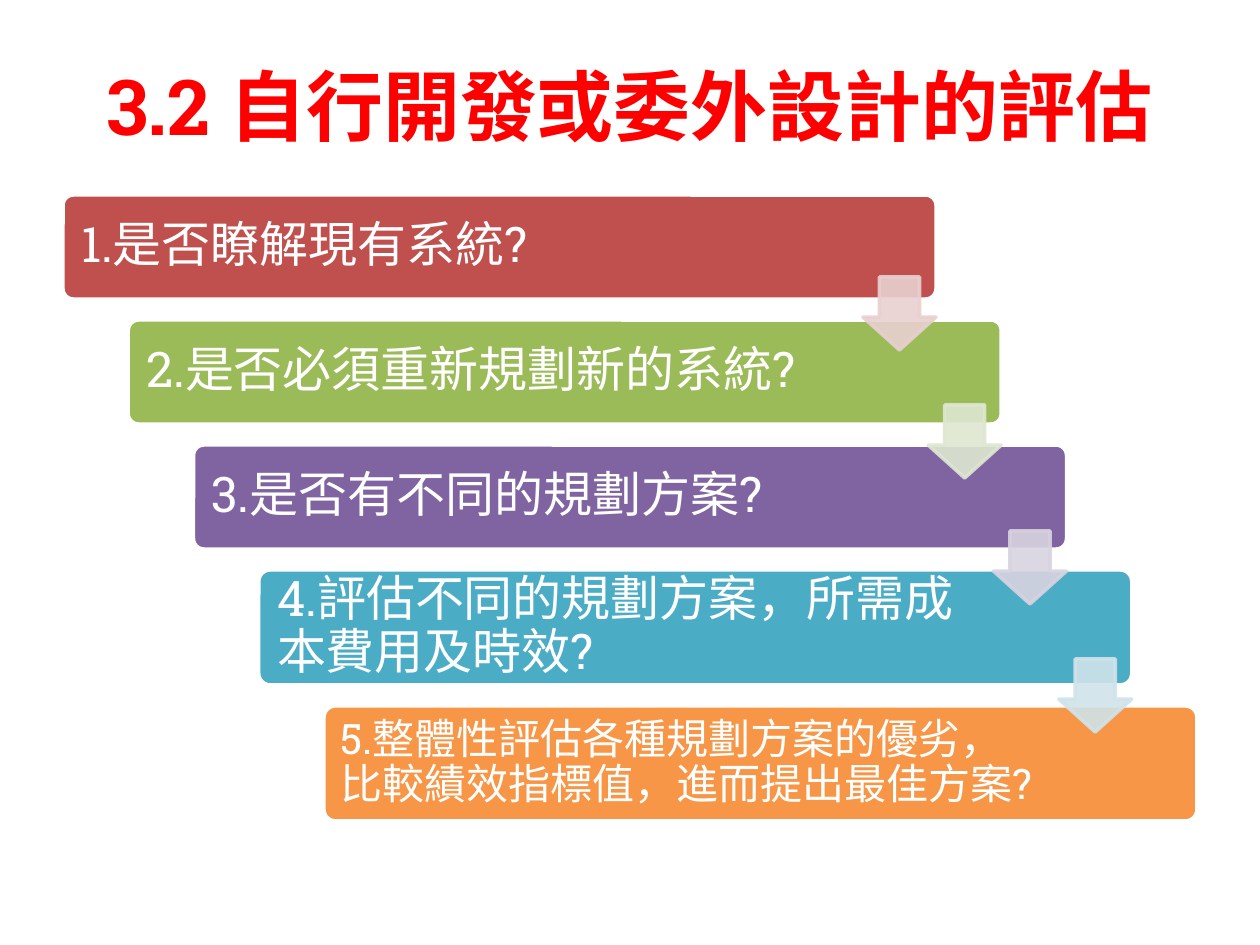
import pptx
import pptx.dml.color
import pptx.enum.shapes
import pptx.enum.text
import pptx.oxml.ns
import pptx.util
from lxml import etree

PX = 914400 / 126
FONT = "Roboto Slab"
SHAPES = pptx.enum.shapes.MSO_SHAPE
ALIGN = pptx.enum.text.PP_ALIGN

# question, bar colour, bar height, text size, side inset, right inset,
# then the next arrow's colour and its drop below the bar's top
STEPS = [
    ("1.是否瞭解現有系統?", "C0504D", 104, 28, 15, 143, "E8D0D0", 82),
    ("2.是否必須重新規劃新的系統?", "9BBB59", 104, 28, 15, 153, "DEE7D1", 85),
    ("3.是否有不同的規劃方案?", "8064A2", 104, 28, 15, 153, "D8D3E0", 86),
    ("4.評估不同的規劃方案，所需成本費用及時效?", "4BACC6", 115, 28, 15, 153, "D0E3EA", 89),
    ("5.整體性評估各種規劃方案的優劣，比較績效指標值，進而提出最佳方案?",
     "F79646", 115, 24, 13, 151, None, None),
]


def px(length):
    return pptx.util.Emu(round(length * PX))


def rgb(value):
    return pptx.dml.color.RGBColor.from_string(value)


def apply(target, formats):
    for name, value in formats.items():
        setattr(target, name, value)


def write(frame, words, align, size, colour, bold=False, spacing=None, insets=(13, 6, 13, 6)):
    """Fill a text frame; insets run left, top, right, bottom."""
    left, top, right, bottom = map(px, insets)
    apply(frame, {
        "word_wrap": True,
        "vertical_anchor": pptx.enum.text.MSO_ANCHOR.MIDDLE,
        "margin_left": left, "margin_top": top,
        "margin_right": right, "margin_bottom": bottom,
    })
    paragraph = frame.paragraphs[0]
    apply(paragraph, {"alignment": align, "line_spacing": spacing})
    run = paragraph.add_run()
    run.text = words
    apply(run.font, {"name": FONT, "size": pptx.util.Pt(size), "bold": bold})
    run.font.color.rgb = rgb(colour)


def add_block(slide, preset, box, fill, line, adjustments):
    block = slide.shapes.add_shape(preset, *map(px, box))
    block.shadow.inherit = False
    for index, value in enumerate(adjustments):
        block.adjustments[index] = value
    block.fill.solid()
    block.fill.fore_color.rgb = rgb(fill)
    block.line.color.rgb = rgb(line)
    block.line.width = pptx.util.Pt(2)
    return block


def add_title(slide, box):
    title = slide.shapes.add_textbox(*map(px, box))
    write(title.text_frame, "3.2 自行開發或委外設計的評估", ALIGN.CENTER, 44, "FF0000", bold=True)


def add_arrow(slide, box, colour):
    """Down arrow, slightly see-through in both fill and outline."""
    arrow = add_block(slide, SHAPES.DOWN_ARROW, box, colour, colour, (0.55, 0.45))
    for tint in arrow.element.spPr.iter(pptx.oxml.ns.qn("a:srgbClr")):
        etree.SubElement(tint, pptx.oxml.ns.qn("a:alpha"), val="90000")


def add_staircase(slide, box, bar_width=873, gap=21, arrow_size=73):
    """Step the bars evenly across the box, then lay the arrows over them."""
    left, top, width, _ = box
    stride = (width - bar_width) / (len(STEPS) - 1)
    arrows = []
    for index, (question, fill, height, size, side, right, tint, drop) in enumerate(STEPS):
        bar_left = left + index * stride
        bar = add_block(slide, SHAPES.ROUNDED_RECTANGLE,
                        (bar_left, top, bar_width, height), fill, "FFFFFF", (0.1,))
        write(bar.text_frame, question, ALIGN.LEFT, size, "FFFFFF", spacing=0.9,
              insets=(side, side, right, side))
        if tint:
            arrow_left = bar_left + bar_width - arrow_size
            arrows.append(((arrow_left, top + drop, arrow_size, arrow_size), tint))
        top += height + gap
    for arrow_box, tint in arrows:
        add_arrow(slide, arrow_box, tint)


def main():
    deck = pptx.Presentation()
    apply(deck, {"slide_width": px(1260), "slide_height": px(945)})
    slide = deck.slides.add_slide(deck.slide_layouts[6])
    add_title(slide, (63, 26, 1134, 158))
    add_staircase(slide, (63, 195, 1134, 626))
    deck.save("out.pptx")


if __name__ == "__main__":
    main()
